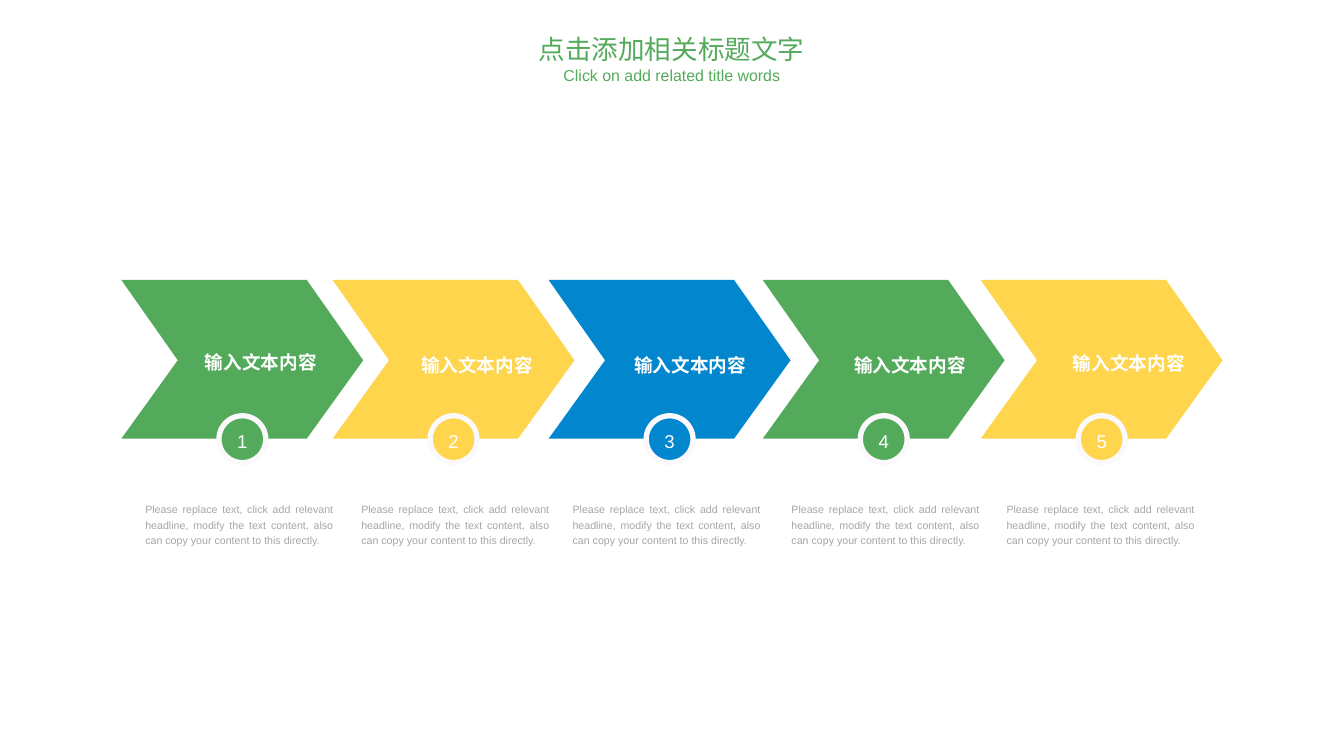
from dataclasses import dataclass

from lxml.etree import SubElement
from pptx import Presentation
from pptx.dml.color import RGBColor
from pptx.enum.shapes import MSO_SHAPE
from pptx.enum.text import MSO_ANCHOR, MSO_AUTO_SIZE, PP_ALIGN
from pptx.oxml.ns import qn
from pptx.slide import Slide
from pptx.text.text import TextFrame
from pptx.util import Inches, Pt


@dataclass(frozen=True)
class Theme:
    green: str = "54AA5B"
    yellow: str = "FED54D"
    blue: str = "0287CF"
    white: str = "FFFFFF"
    ring: str = "FBF9FC"
    gray: str = "A6A6A6"
    latin: str = "Arial"
    chinese: str = "Noto Sans CJK SC"
    title_size: float = 20
    subtitle_size: float = 12
    label_size: float = 14
    note_size: float = 8


@dataclass(frozen=True)
class Step:
    number: int
    color: str
    left: float
    label_center: float
    label_middle: float
    note_left: float


@dataclass(frozen=True)
class TextStyle:
    size: float
    color: str
    font: str
    bold: bool = False
    align: PP_ALIGN = PP_ALIGN.CENTER
    anchor: MSO_ANCHOR = MSO_ANCHOR.MIDDLE
    line_spacing: float = 1.2
    inset_x: float = 0
    inset_y: float = 0


THEME = Theme()
STEPS = [
    Step(1, THEME.green, 1.27, 2.73, 3.77, 1.52),
    Step(2, THEME.yellow, 3.48, 4.99, 3.8, 3.78),
    Step(3, THEME.blue, 5.74, 7.22, 3.8, 5.99),
    Step(4, THEME.green, 7.98, 9.52, 3.8, 8.28),
    Step(5, THEME.yellow, 10.26, 11.81, 3.78, 10.53),
]
LABEL = "输入文本内容"
NOTE = (
    "Please replace text, click add relevant headline, modify the text "
    "content, also can copy your content to this directly."
)
ARROW_TOP = 2.93
ARROW_OUTLINE = [(0, 0), (0.59, 0.84), (0, 1.66), (1.94, 1.66), (2.53, 0.84), (1.94, 0)]
ARROW_WIDTH = 2.53
BADGE_TOP, BADGE_SIZE = 4.35, 0.49
LABEL_WIDTH, LABEL_HEIGHT = 1.7, 0.26
NOTE_TOP, NOTE_WIDTH, NOTE_HEIGHT = 5.24, 1.97, 0.47

LABEL_STYLE = TextStyle(THEME.label_size, THEME.white, THEME.latin, bold=True)
BADGE_STYLE = TextStyle(THEME.label_size, THEME.white, THEME.latin)
NOTE_STYLE = TextStyle(
    THEME.note_size, THEME.gray, THEME.latin,
    align=PP_ALIGN.JUSTIFY, anchor=MSO_ANCHOR.TOP,
)
TITLE_STYLE = TextStyle(
    THEME.title_size, THEME.green, THEME.chinese, anchor=MSO_ANCHOR.TOP,
    line_spacing=1, inset_x=0.11, inset_y=0.05,
)
SUBTITLE_STYLE = TextStyle(
    THEME.subtitle_size, THEME.green, THEME.latin, anchor=MSO_ANCHOR.TOP,
    line_spacing=1, inset_x=0.11, inset_y=0.05,
)


def write(frame: TextFrame, text: str, style: TextStyle) -> None:
    frame.text = text
    frame.word_wrap = True
    frame.auto_size = MSO_AUTO_SIZE.NONE
    frame.vertical_anchor = style.anchor
    frame.margin_left = frame.margin_right = Inches(style.inset_x)
    frame.margin_top = frame.margin_bottom = Inches(style.inset_y)
    para = frame.paragraphs[0]
    para.alignment = style.align
    para.line_spacing = style.line_spacing
    para.space_before = Pt(0)
    span = para.runs[0]
    span.font.size = Pt(style.size)
    span.font.bold = style.bold
    span.font.color.rgb = RGBColor.from_string(style.color)
    span.font.name = style.font
    # East Asian typeface for the Chinese characters
    SubElement(span.font._element, qn("a:ea")).set("typeface", THEME.chinese)


def place_heading(slide: Slide, index: int, text: str, style: TextStyle,
                  left: float, top: float, width: float, height: float) -> None:
    heading = slide.placeholders[index]
    heading.left, heading.top = Inches(left), Inches(top)
    heading.width, heading.height = Inches(width), Inches(height)
    write(heading.text_frame, text, style)


def add_text(slide: Slide, text: str, style: TextStyle,
             left: float, top: float, width: float, height: float) -> None:
    box = slide.shapes.add_textbox(Inches(left), Inches(top), Inches(width), Inches(height))
    write(box.text_frame, text, style)


def add_arrow(slide: Slide, step: Step) -> None:
    points = [(Inches(step.left + x), Inches(ARROW_TOP + y)) for x, y in ARROW_OUTLINE]
    builder = slide.shapes.build_freeform(*points[0])
    builder.add_line_segments(points[1:], close=True)
    arrow = builder.convert_to_shape()
    arrow.shadow.inherit = False
    arrow.fill.solid()
    arrow.fill.fore_color.rgb = RGBColor.from_string(step.color)
    arrow.line.fill.background()


def add_badge(slide: Slide, step: Step) -> None:
    left = step.left + (ARROW_WIDTH - BADGE_SIZE) / 2
    badge = slide.shapes.add_shape(
        MSO_SHAPE.OVAL, Inches(left), Inches(BADGE_TOP), Inches(BADGE_SIZE), Inches(BADGE_SIZE)
    )
    badge.shadow.inherit = False
    badge.fill.solid()
    badge.fill.fore_color.rgb = RGBColor.from_string(step.color)
    badge.line.color.rgb = RGBColor.from_string(THEME.ring)
    badge.line.width = Pt(4)
    write(badge.text_frame, str(step.number), BADGE_STYLE)


def add_step(slide: Slide, step: Step) -> None:
    add_arrow(slide, step)
    add_text(slide, LABEL, LABEL_STYLE, step.label_center - LABEL_WIDTH / 2,
             step.label_middle - LABEL_HEIGHT / 2, LABEL_WIDTH, LABEL_HEIGHT)
    add_badge(slide, step)
    add_text(slide, NOTE, NOTE_STYLE, step.note_left, NOTE_TOP, NOTE_WIDTH, NOTE_HEIGHT)


def main() -> None:
    deck = Presentation()
    deck.slide_width, deck.slide_height = Inches(14.06), Inches(7.91)
    page = deck.slides.add_slide(deck.slide_layouts[0])

    # Title and subtitle
    place_heading(page, 0, "点击添加相关标题文字", TITLE_STYLE, 5.35, 0.29, 3.35, 0.41)
    place_heading(page, 1, "Click on add related title words", SUBTITLE_STYLE,
                  5.76, 0.64, 2.54, 0.41)

    # Process arrows with badges and notes
    for step in STEPS:
        add_step(page, step)

    deck.save("out.pptx")


if __name__ == "__main__":
    main()
